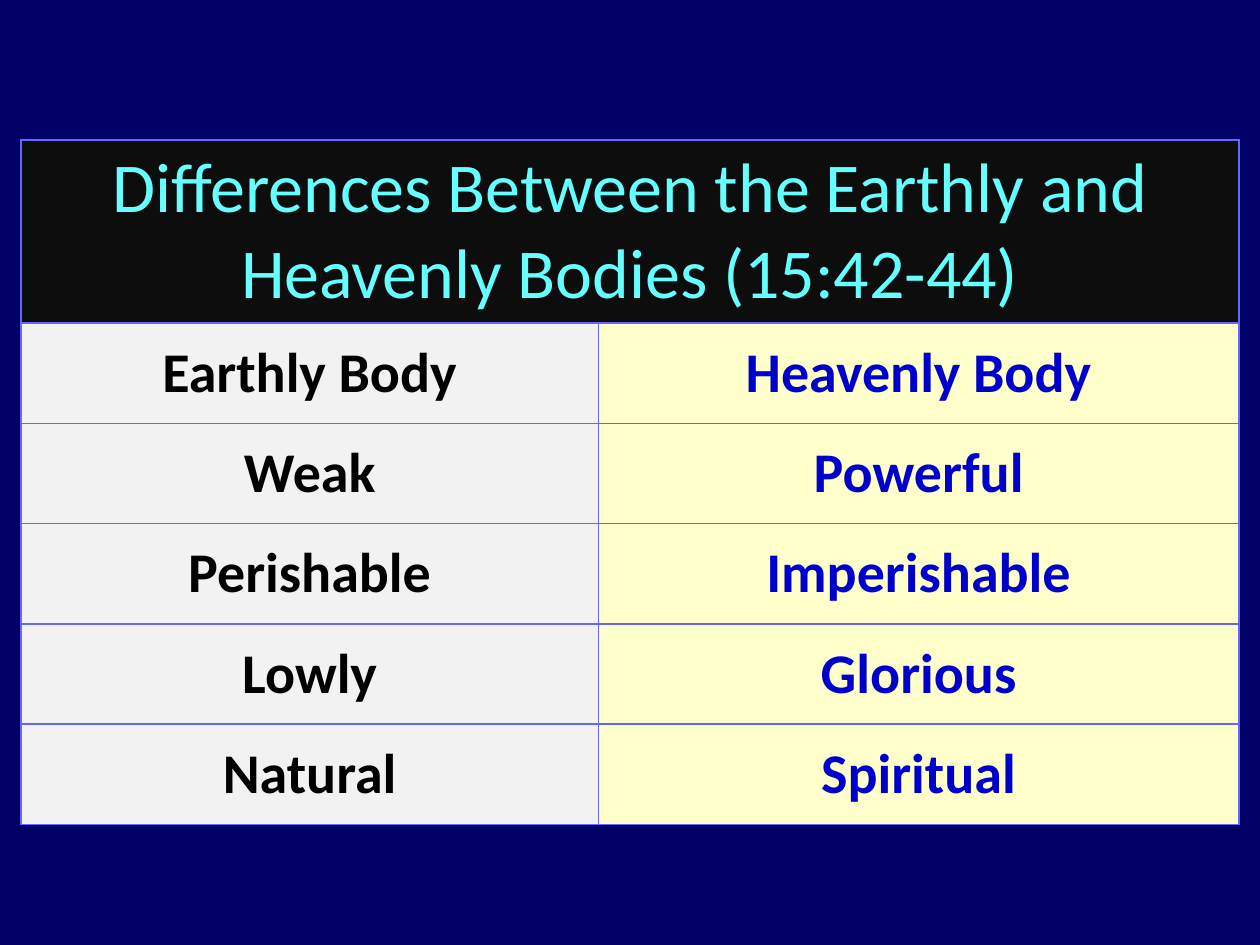
from lxml import etree
from pptx import Presentation
from pptx.dml.color import RGBColor
from pptx.enum.text import MSO_ANCHOR, PP_ALIGN
from pptx.oxml import parse_xml
from pptx.oxml.ns import nsdecls
from pptx.util import Pt

CENTER = PP_ALIGN.CENTER
MIDDLE = MSO_ANCHOR.MIDDLE

THEME = {
    "font": "Calibri",
    "background": "000066",
    "border": "6666FF",
    "border_width": Pt(1),
    "heading": {"fill": "0D0D0D", "color": "66FFFF", "size": 40, "bold": False},
    "earthly": {"fill": "F2F2F2", "color": "000000", "size": 32, "bold": True},
    "heavenly": {"fill": "FFFFCC", "color": "0000CC", "size": 32, "bold": True},
}

HEADING = "Differences Between the Earthly and Heavenly Bodies (15:42-44)"
BODIES = [
    ("Earthly Body", "Heavenly Body"),
    ("Weak", "Powerful"),
    ("Perishable", "Imperishable"),
    ("Lowly", "Glorious"),
    ("Natural", "Spiritual"),
]
COLUMN_WIDTHS = (330, 366)
ROW_HEIGHT = 57.3
TABLE_HEIGHT = 390


def add_borders(cell):
    properties = cell._tc.get_or_add_tcPr()
    for position, side in enumerate(("lnL", "lnR", "lnT", "lnB")):
        line = parse_xml(
            f'<a:{side} {nsdecls("a")} w="{THEME["border_width"]}"><a:solidFill>'
            f'<a:srgbClr val="{THEME["border"]}"/></a:solidFill></a:{side}>'
        )
        properties.insert(position, line)


def fill_cell(cell, text, style):
    cell.fill.solid()
    cell.fill.fore_color.rgb = RGBColor.from_string(style["fill"])
    cell.vertical_anchor = MIDDLE
    para = cell.text_frame.paragraphs[0]
    para.alignment = CENTER
    span = para.add_run()
    span.text = text
    formats = {"name": THEME["font"], "size": Pt(style["size"]), "bold": style["bold"]}
    for name, value in formats.items():
        setattr(span.font, name, value)
    span.font.color.rgb = RGBColor.from_string(style["color"])


# Deck and background
deck = Presentation()
deck.slide_width, deck.slide_height = Pt(720), Pt(540)
page = deck.slides.add_slide(deck.slide_layouts[6])
page.background.fill.solid()
page.background.fill.fore_color.rgb = RGBColor.from_string(THEME["background"])

# Table grid; the heading row grows to hold its two lines
frame = page.shapes.add_table(
    len(BODIES) + 1, len(COLUMN_WIDTHS), Pt(12), Pt(80), Pt(sum(COLUMN_WIDTHS)), Pt(TABLE_HEIGHT)
)
table = frame.table
for column, width in zip(table.columns, COLUMN_WIDTHS):
    column.width = Pt(width)
for row in table.rows:
    row.height = Pt(ROW_HEIGHT)
frame.height = Pt(TABLE_HEIGHT)

# Heading across both columns
table.cell(0, 0).merge(table.cell(0, 1))
fill_cell(table.cell(0, 0), HEADING, THEME["heading"])

# Earthly and heavenly columns
for row_number, pair in enumerate(BODIES, start=1):
    for column_number, (text, body) in enumerate(zip(pair, ("earthly", "heavenly"))):
        fill_cell(table.cell(row_number, column_number), text, THEME[body])

# Borders
for cell in table.iter_cells():
    add_borders(cell)

deck.save("out.pptx")
